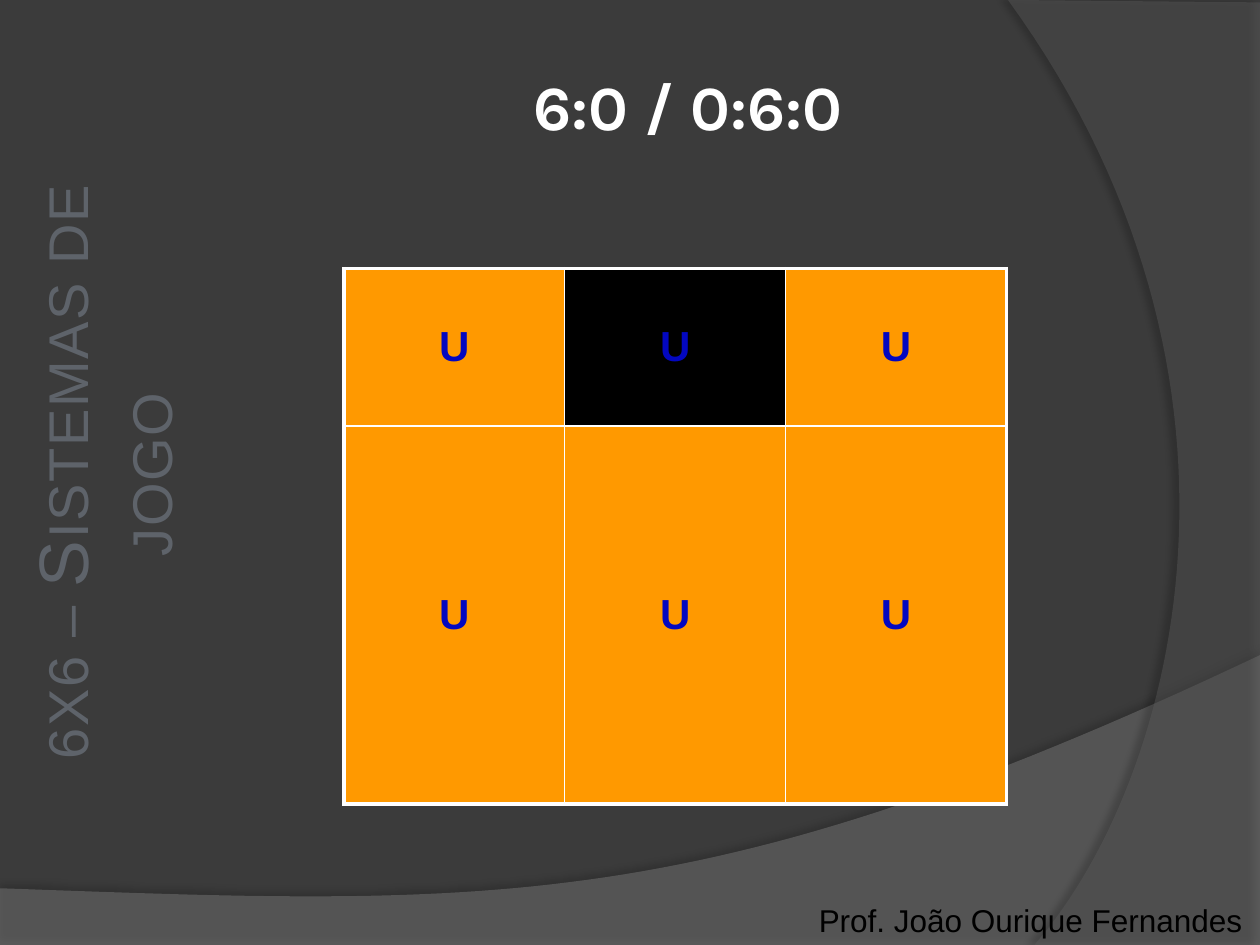
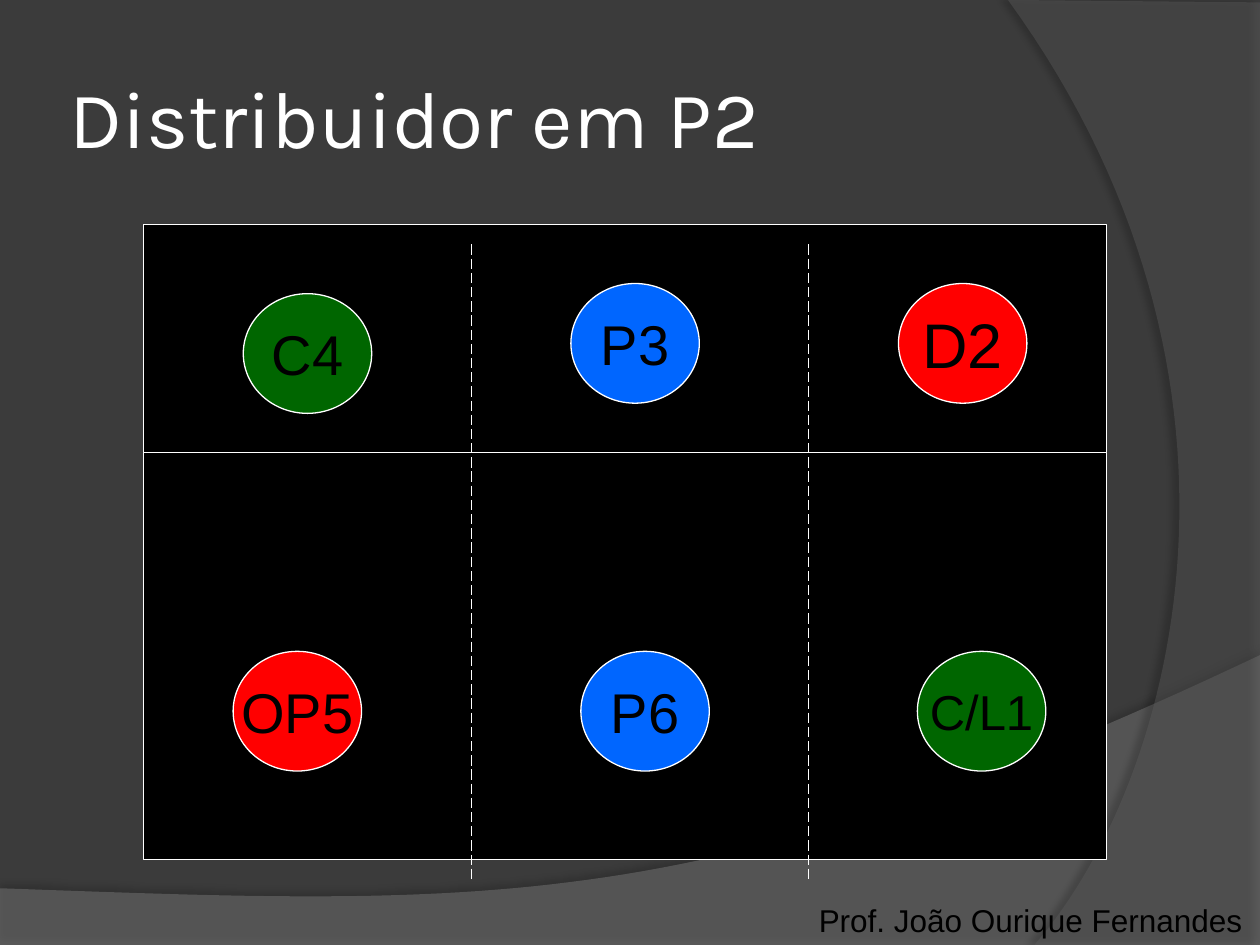
"""Build two volleyball slides: a 6:0 system grid and a setter-in-P2 court."""
from lxml.etree import SubElement as Sub
from pptx import Presentation
from pptx.dml.color import RGBColor as Rgb
from pptx.enum.dml import MSO_LINE as Dash
from pptx.enum.shapes import MSO_CONNECTOR as Link, MSO_SHAPE as Form
from pptx.enum.text import MSO_ANCHOR as Anchor, MSO_AUTO_SIZE as Auto, PP_ALIGN as Align
from pptx.oxml import parse_xml
from pptx.oxml.ns import nsdecls, qn
from pptx.util import Pt

HUES = {name: Rgb.from_string(code) for name, code in {
    "back": "3B3B3B", "wave": "7F7F7F", "arc": "5E5E5E", "white": "FFFFFF",
    "black": "000000", "side": "5E636A", "mark": "0307C0", "cell": "FF9900",
    "red": "FF0000", "green": "006600", "blue": "0066FF"}.items()}


def write(frame, text, size=18, hue="black", font="Arial", bold=False,
          align=Align.LEFT, wrap=True, auto=Auto.NONE, inset=None):
    """Put one formatted run in a text frame and return the run."""
    frame.word_wrap = wrap
    frame.auto_size = auto
    frame.vertical_anchor = Anchor.MIDDLE
    if inset is not None:
        frame.margin_left = frame.margin_right = Pt(inset)
        frame.margin_top = frame.margin_bottom = Pt(inset)
    para = frame.paragraphs[0]
    para.alignment = align
    run = para.add_run()
    run.text = text
    run.font.name, run.font.size, run.font.bold = font, Pt(size), bold
    run.font.color.rgb = HUES[hue]
    return run


deck = Presentation()
deck.slide_width, deck.slide_height = Pt(720), Pt(540)
base = deck.slide_master
base.background.fill.solid()
base.background.fill.fore_color.rgb = HUES["back"]

heads = [("6:0 / 0:6:0", 98, 15, 590.4, 36, True, Align.CENTER),
         ("Distribuidor em P2", 36, 21.6, 588.2, 46, False, Align.LEFT)]
pages = []
for text, x, y, width, size, bold, align in heads:
    page = deck.slides.add_slide(deck.slide_layouts[5])
    title = page.shapes.title
    title.left, title.top, title.width, title.height = Pt(x), Pt(y), Pt(width), Pt(90)
    write(title.text_frame, text, size, "white", "Karla", bold, align, inset=3.6)
    pages.append(page)
grid, play = pages

bands = [("wave", 45, 35, 3.5, 270, [(0, 507.6), (0, 540), (720, 540)],
          [(720, 374.4), (402.5, 524.9), (281.5, 517.7), (0, 507.6)]),
         ("arc", 40, 45, 4, 180, [(720, 1.4), (720, 540)],
          [(591.1, 540), (673.2, 445.7), (733, 216), (576, 0)])]
for spot, (hue, alpha, shade, gap, turn, edge, bend) in enumerate(bands):
    steps = [n / 60 for n in range(61)]
    curve = [tuple((1 - t) ** 3 * a + 3 * t * (1 - t) ** 2 * b
                   + 3 * t * t * (1 - t) * c + t ** 3 * d for a, b, c, d in zip(*bend))
             for t in steps]
    dots = [(Pt(x), Pt(y)) for x, y in edge + curve]
    pen = grid.shapes.build_freeform(*dots[0], scale=1.0)
    pen.add_line_segments(dots[1:], close=True)
    band = pen.convert_to_shape()
    band.fill.solid()
    band.fill.fore_color.rgb = HUES[hue]
    band.line.fill.background()
    band.shadow.inherit = False
    props = band.element.spPr
    Sub(props.find(".//" + qn("a:srgbClr")), qn("a:alpha"), val=str(alpha * 1000))
    props.find(qn("a:effectLst")).append(parse_xml(
        f'<a:outerShdw {nsdecls("a")} blurRad="{Pt(4)}" dist="{Pt(gap)}" '
        f'dir="{turn * 60000}" algn="ctr" rotWithShape="0"><a:srgbClr val="000000">'
        f'<a:alpha val="{shade * 1000}"/></a:srgbClr></a:outerShdw>'))
    band.element.nvSpPr.cNvPr.set("id", str(50 + spot))
    base.shapes.element.insert(2 + spot, band.element)

side = grid.shapes.add_textbox(Pt(26.6), Pt(51.8), Pt(63.4), Pt(434.9))
run = write(side.text_frame, "6x6 – Sistemas de jogo", 40, "side",
            align=Align.CENTER, auto=Auto.SHAPE_TO_FIT_TEXT)
side.element.txBody.bodyPr.set("vert", "vert270")
run.font.element.set("spc", "100") if hasattr(run.font, "element") else None
look = side.element.find(".//" + qn("a:rPr"))
look.set("spc", "100")
look.set("cap", "small")

tall = [90, 216]
board = grid.shapes.add_table(2, 3, Pt(196.5), Pt(153.4), Pt(378.6), Pt(sum(tall)))
table = board.table
for col in table.columns:
    col.width = Pt(126.2)
for row, high in zip(table.rows, tall):
    row.height = Pt(high)
for spot, (cell, node) in enumerate(zip(table.iter_cells(), board.element.iter(qn("a:tc")))):
    row, col = divmod(spot, 3)
    cell.fill.solid()
    cell.fill.fore_color.rgb = HUES["black" if spot == 1 else "cell"]
    cell.vertical_anchor = Anchor.MIDDLE
    write(cell.text_frame, "U", 24, "mark", bold=True, align=Align.CENTER)
    outer = {"L": col == 0, "R": col == 2, "T": row == 0, "B": row == 1}
    for rank, (edge, thick) in enumerate(outer.items()):
        node.get_or_add_tcPr().insert(rank, parse_xml(
            f'<a:ln{edge} {nsdecls("a")} w="{Pt(2.25 if thick else 1)}"><a:solidFill>'
            f'<a:srgbClr val="{HUES["white"]}"/></a:solidFill></a:ln{edge}>'))

court = play.shapes.add_shape(Form.RECTANGLE, Pt(82.1), Pt(128.2), Pt(550.1), Pt(362.9))
forms = [(court, "black")]
discs = [("D2", 513.4, 162, "red", 36), ("OP5", 133.2, 372.2, "red", 32),
         ("C4", 139, 167.8, "green", 32), ("C/L1", 524.2, 372.2, "green", 28),
         ("P3", 326.2, 162, "blue", 32), ("P6", 331.9, 372.2, "blue", 32)]
for text, x, y, hue, size in discs:
    disc = play.shapes.add_shape(Form.OVAL, Pt(x), Pt(y), Pt(73.4), Pt(68.4))
    write(disc.text_frame, text, size, align=Align.CENTER, wrap=False)
    forms.append((disc, hue))
for form, hue in forms:
    form.shadow.inherit = False
    form.fill.solid()
    form.fill.fore_color.rgb = HUES[hue]
    form.line.color.rgb = HUES["white"]
    form.line.width = Pt(0.75)

rules = [(82.1, 258.5, 632.2, 258.5, None),
         (269.3, 139.7, 269.3, 502.6, Dash.LONG_DASH),
         (462.2, 139.7, 462.2, 502.6, Dash.LONG_DASH)]
for *ends, dash in rules:
    rule = play.shapes.add_connector(Link.STRAIGHT, *map(Pt, ends))
    rule.line.color.rgb = HUES["white"]
    rule.line.width = Pt(0.75)
    rule.line.dash_style = dash
    Sub(rule.element.spPr, qn("a:effectLst"))

for page in pages:
    foot = page.shapes.add_textbox(Pt(460.8), Pt(511.2), Pt(259.2), Pt(28.8))
    write(foot.text_frame, "Prof. João Ourique Fernandes", wrap=False,
          auto=Auto.SHAPE_TO_FIT_TEXT)

deck.save("out.pptx")
